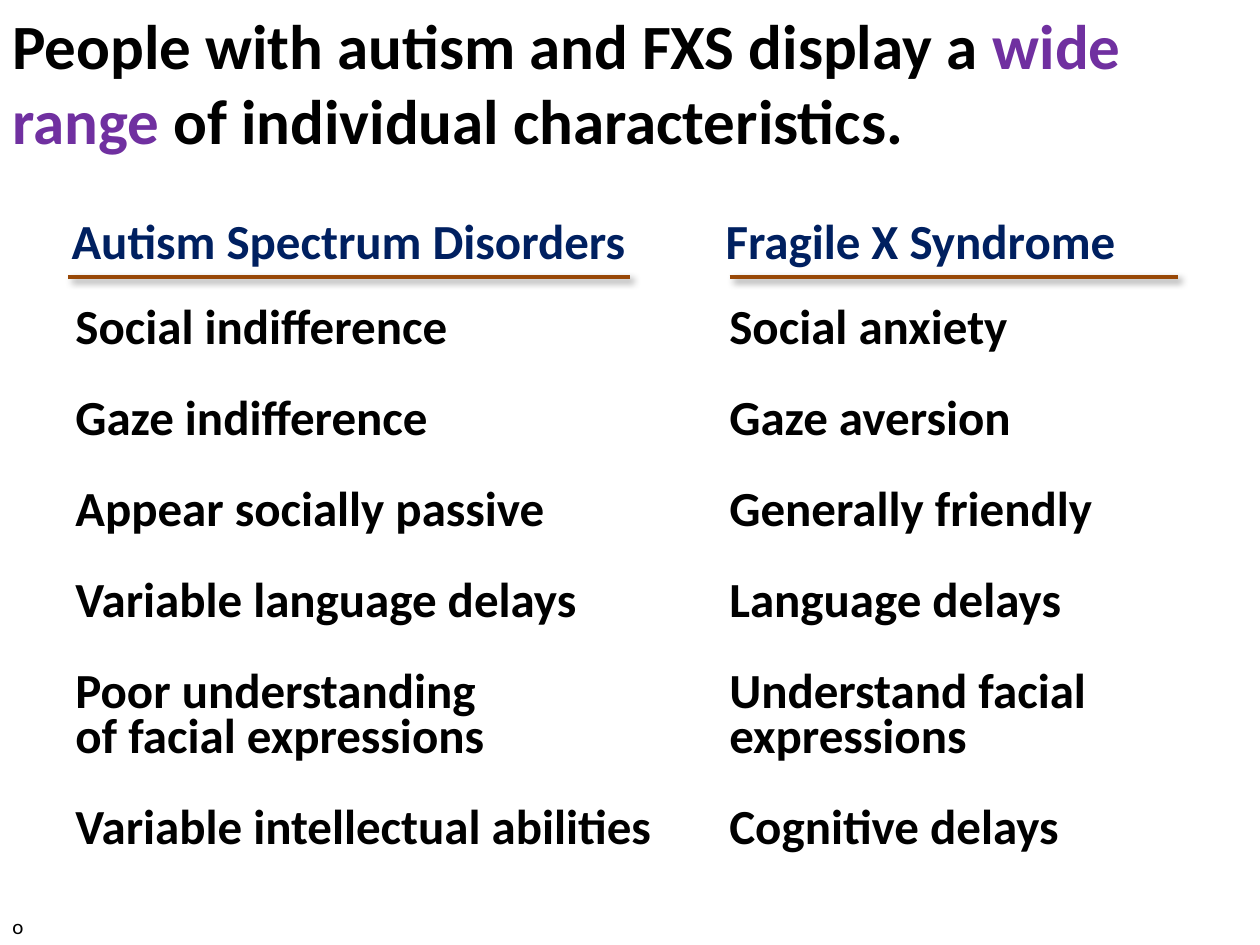
from lxml.etree import SubElement
from pptx import Presentation
from pptx.dml.color import RGBColor
from pptx.enum.shapes import MSO_CONNECTOR
from pptx.oxml.ns import qn
from pptx.util import Inches, Pt

BASE = {"name": "Calibri", "size": Pt(28), "bold": True}
TITLE = {**BASE, "size": Pt(36)}
NOTE = {**BASE, "size": Pt(12), "bold": False}
TAB = 5.19
HEADS = ("Autism Spectrum Disorders", "Fragile X Syndrome")
ROWS = [
    ("Social indifference", "Social anxiety"),
    ("Gaze indifference", "Gaze aversion"),
    ("Appear socially passive", "Generally friendly"),
    ("Variable language delays", "Language delays"),
    ("Poor understanding", "Understand facial"),
    ("of facial expressions", "expressions"),
    ("Variable intellectual abilities", "Cognitive delays"),
]


def paint(target, color):
    """Give a font or line colour format its hex colour."""
    target.rgb = RGBColor.from_string(color)


def add_run(para, text, style, color="000000"):
    """Add one styled run to a paragraph."""
    run = para.add_run()
    run.text = text
    for key, value in style.items():
        setattr(run.font, key, value)
    paint(run.font.color, color)


def add_box(slide, box, wrap=True):
    """Add a text box and return its frame."""
    frame = slide.shapes.add_textbox(*map(Inches, box)).text_frame
    frame.word_wrap = wrap
    return frame


def add_pair(para, pair, space, color="000000"):
    """Set two entries on one line, split by a tab stop."""
    stops = SubElement(para._p.get_or_add_pPr(), qn("a:tabLst"))
    SubElement(stops, qn("a:tab"), pos=str(Inches(TAB)), algn="l")
    para.line_spacing = Pt(space)
    add_run(para, "\t".join(pair), BASE, color)


def add_rule(slide, left, top, width):
    """Draw a brown rule with a soft shadow."""
    ends = map(Inches, (left, top, left + width, top))
    rule = slide.shapes.add_connector(MSO_CONNECTOR.STRAIGHT, *ends)
    rule.line.width = Pt(2.5)
    paint(rule.line.color, "984807")
    effects = SubElement(rule._element.spPr, qn("a:effectLst"))
    shade = SubElement(effects, qn("a:outerShdw"), blurRad=str(Pt(4)),
                       dist=str(Pt(3)), dir="2700000", algn="tl", rotWithShape="0")
    tone = SubElement(shade, qn("a:srgbClr"), val="000000")
    SubElement(tone, qn("a:alpha"), val="40000")


def add_title(slide, box):
    """Write the title with its stressed words."""
    para = add_box(slide, box).paragraphs[0]
    add_run(para, "People with autism and FXS display a ", TITLE)
    add_run(para, "wide range", TITLE, "7030A0")
    add_run(para, " of individual characteristics.", TITLE)


def add_heads(slide, box):
    """Write both column heads and rule them off."""
    left, top, _, height = box
    add_pair(add_box(slide, box).paragraphs[0], HEADS, 30, "002060")
    for shift, width in ((0.07, 4.46), (5.32, 3.56)):
        add_rule(slide, left + shift, top + height, width)


def add_rows(slide, box):
    """List the traits, keeping a wrapped row close to its start."""
    frame = add_box(slide, box)
    for index, pair in enumerate(ROWS):
        para = frame.add_paragraph() if index else frame.paragraphs[0]
        add_pair(para, pair, 26)
        if index and not pair[0][0].islower():
            para.space_before = Pt(26)


def add_note(slide, box):
    """Write the small mark in the corner."""
    add_run(add_box(slide, box, False).paragraphs[0], "o", NOTE)


def main():
    """Build and save the slide."""
    deck = Presentation()
    deck.slide_width, deck.slide_height = Inches(10), Inches(7.5)
    slide = deck.slides.add_slide(deck.slide_layouts[6])
    add_title(slide, (0, 0, 10, 1.31))
    add_rows(slide, (0.5, 2.4, 8.85, 4.48))
    add_heads(slide, (0.47, 1.67, 9.28, 0.53))
    add_note(slide, (0, 7.2, 0.29, 0.3))
    deck.save("out.pptx")


if __name__ == "__main__":
    main()
